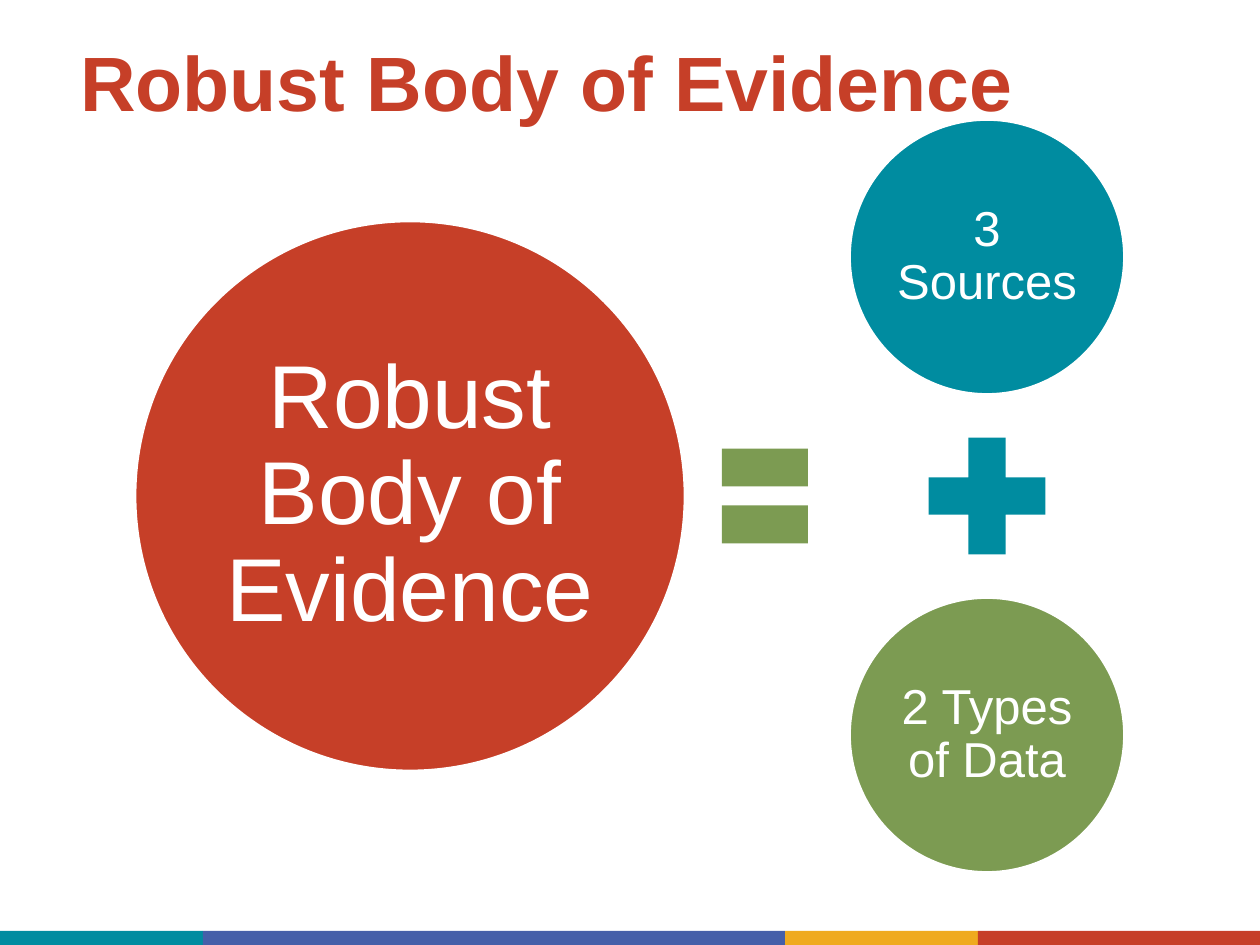
from dataclasses import dataclass

from pptx import Presentation
from pptx.dml.color import RGBColor
from pptx.enum.shapes import MSO_SHAPE
from pptx.enum.text import MSO_ANCHOR, PP_ALIGN
from pptx.util import Emu, Pt

PX = 914400 / 126


@dataclass(frozen=True)
class Theme:
    font: str = "Arial"
    white: str = "FFFFFF"
    red: str = "C63F28"
    teal: str = "008CA0"
    green: str = "7C9B52"
    blue: str = "455FA9"
    gold: str = "EFAA1F"
    title_size: int = 44
    result_size: int = 51
    part_size: int = 28


def px(length):
    return Emu(round(length * PX))


class EquationSlide:
    def __init__(self, slide, theme):
        self.slide = slide
        self.theme = theme

    def shape(self, preset, left, top, width, height, color):
        shape = self.slide.shapes.add_shape(
            preset, px(left), px(top), px(width), px(height))
        shape.shadow.inherit = False
        shape.fill.solid()
        shape.fill.fore_color.rgb = RGBColor.from_string(color)
        shape.line.fill.background()
        return shape

    def label(self, frame, wording, size, color, bold=False):
        frame.word_wrap = True
        paragraph = frame.paragraphs[0]
        paragraph.text = wording
        paragraph.font.name = self.theme.font
        paragraph.font.size = Pt(size)
        paragraph.font.bold = bold
        paragraph.font.color.rgb = RGBColor.from_string(color)
        return paragraph

    def circle(self, center_x, center_y, diameter, color, wording, size, inset):
        circle = self.shape(MSO_SHAPE.OVAL, center_x - diameter / 2,
                            center_y - diameter / 2, diameter, diameter, color)
        circle.line.color.rgb = RGBColor.from_string(self.theme.white)
        circle.line.width = Pt(1)
        frame = circle.text_frame
        frame.margin_left = frame.margin_right = px(inset)
        frame.margin_top = frame.margin_bottom = px(inset)
        frame.vertical_anchor = MSO_ANCHOR.MIDDLE
        paragraph = self.label(frame, wording, size, self.theme.white)
        paragraph.alignment = PP_ALIGN.CENTER
        paragraph.line_spacing = 0.9

    def sign(self, preset, center_x, center_y, width, height, color):
        self.shape(preset, center_x - width / 2, center_y - height / 2,
                   width, height, color)

    def title(self, left, top, width, height, wording):
        title = self.slide.shapes.add_textbox(
            px(left), px(top), px(width), px(height))
        self.label(title.text_frame, wording, self.theme.title_size,
                   self.theme.red, bold=True)

    def stripe(self, top, height, edges, colors):
        for left, right, color in zip(edges, edges[1:], colors):
            self.shape(MSO_SHAPE.RECTANGLE, left, top, right - left, height, color)


def main():
    deck = Presentation()
    deck.slide_width, deck.slide_height = px(1260), px(945)
    theme = Theme()
    page = EquationSlide(deck.slides.add_slide(deck.slide_layouts[6]), theme)

    page.stripe(931, 14, (0, 203, 785, 978, 1260),
                (theme.teal, theme.blue, theme.gold, theme.red))

    middle, parts_x, part_offset = 496, 987, 239
    parts = (("3 Sources", theme.teal, -part_offset),
             ("2 Types of Data", theme.green, part_offset))
    for wording, color, offset in parts:
        page.circle(parts_x, middle + offset, 274, color, wording,
                    theme.part_size, 5)
    page.sign(MSO_SHAPE.MATH_PLUS, parts_x, middle, 159, 159, theme.teal)
    page.sign(MSO_SHAPE.MATH_EQUAL, 765, middle, 117, 161, theme.green)
    page.circle(410, middle, 549, theme.red, "Robust Body of Evidence",
                theme.result_size, 9)
    page.title(68, 28, 1249, 106, "Robust Body of Evidence")

    deck.save("out.pptx")


if __name__ == "__main__":
    main()
